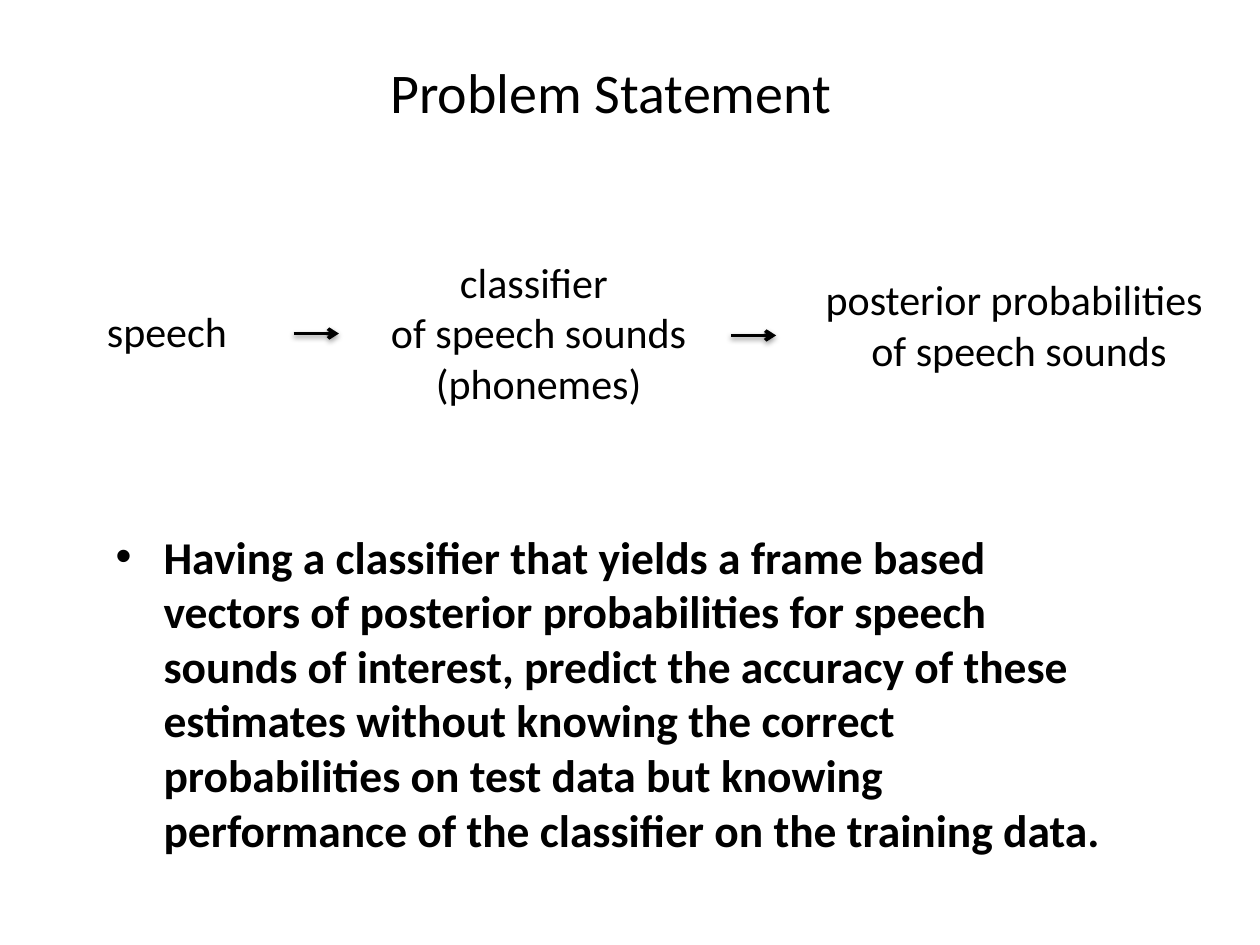
from dataclasses import dataclass

from lxml.etree import SubElement
from pptx import Presentation
from pptx.dml.color import RGBColor
from pptx.enum.shapes import MSO_CONNECTOR
from pptx.enum.text import MSO_ANCHOR, MSO_AUTO_SIZE, PP_ALIGN
from pptx.oxml.ns import qn
from pptx.util import Inches, Pt

WIDTH, HEIGHT = Inches(10), Inches(7.5)


@dataclass(frozen=True)
class Theme:
    font: str = "Calibri"
    ink: str = "000000"
    title: float = 32
    stage: float = 24
    body: float = 26
    line: float = 2


@dataclass(frozen=True)
class Box:
    """Left, top, width and height as shares of the slide."""
    x: float
    y: float
    w: float
    h: float

    def area(self) -> tuple:
        return (int(self.x * WIDTH), int(self.y * HEIGHT),
                int(self.w * WIDTH), int(self.h * HEIGHT))


@dataclass(frozen=True)
class Stage:
    box: Box
    lines: tuple
    align: PP_ALIGN = PP_ALIGN.CENTER


@dataclass(frozen=True)
class Arrow:
    x: float
    y: float
    length: float = 0.036


THEME = Theme()
TITLE = Box(0.035, 0.04, 0.9, 0.113)
BODY = Box(0.082, 0.553, 0.814, 0.372)
STAGES = (
    Stage(Box(0.075, 0.317, 0.116, 0.067), ("speech",), PP_ALIGN.LEFT),
    Stage(Box(0.299, 0.265, 0.257, 0.175),
          ("classifier ", "of speech sounds", "(phonemes)")),
    Stage(Box(0.643, 0.283, 0.324, 0.121),
          ("posterior probabilities", " of speech sounds")),
)
ARROWS = Arrow(0.233, 0.353), Arrow(0.58, 0.355)
GOAL = ("Having a classifier that yields a frame based vectors of posterior "
        "probabilities for speech sounds of interest, predict the accuracy of "
        "these estimates\u00a0without knowing the correct probabilities on test "
        "data but knowing performance of the classifier on the training data.")


def style(para, size: float, align: PP_ALIGN, bold: bool = False) -> None:
    para.alignment = align
    font = para.font
    font.name, font.size, font.bold = THEME.font, Pt(size), bold
    font.color.rgb = RGBColor.from_string(THEME.ink)


def add_title(slide, text: str) -> None:
    shape = slide.shapes.title
    shape.left, shape.top, shape.width, shape.height = TITLE.area()
    frame = shape.text_frame
    frame.text = text
    frame.vertical_anchor = MSO_ANCHOR.MIDDLE
    style(frame.paragraphs[0], THEME.title, PP_ALIGN.CENTER)


def add_body(slide, text: str) -> None:
    frame = slide.shapes.add_textbox(*BODY.area()).text_frame
    frame.word_wrap = True
    frame.text = text
    para = frame.paragraphs[0]
    style(para, THEME.body, PP_ALIGN.LEFT, bold=True)
    props = para._p.get_or_add_pPr()
    indent = Inches(0.38)
    props.set("marL", str(indent))
    props.set("indent", str(-indent))
    mark = props.makeelement(qn("a:buChar"), {"char": "•"})
    face = props.makeelement(qn("a:buFont"), {"typeface": "Arial"})
    props.find(qn("a:defRPr")).addprevious(face)
    face.addnext(mark)


def add_stage(slide, stage: Stage) -> None:
    frame = slide.shapes.add_textbox(*stage.box.area()).text_frame
    frame.word_wrap = False
    frame.auto_size = MSO_AUTO_SIZE.SHAPE_TO_FIT_TEXT
    frame.text = "\n".join(stage.lines)
    for para in frame.paragraphs:
        style(para, THEME.stage, stage.align)


def add_arrow(slide, arrow: Arrow) -> None:
    """Draw a level arrow with a soft shadow below it."""
    y = int(arrow.y * HEIGHT)
    link = slide.shapes.add_connector(
        MSO_CONNECTOR.STRAIGHT, int(arrow.x * WIDTH), y,
        int((arrow.x + arrow.length) * WIDTH), y)
    link.line.color.rgb = RGBColor.from_string(THEME.ink)
    link.line.width = Pt(THEME.line)
    SubElement(link.line._get_or_add_ln(), qn("a:tailEnd"), type="arrow")
    effects = SubElement(link._element.spPr, qn("a:effectLst"))
    shade = SubElement(effects, qn("a:outerShdw"), blurRad=str(Pt(3.1)),
                       dist=str(Pt(1.6)), dir="5400000", rotWithShape="0")
    tint = SubElement(shade, qn("a:srgbClr"), val=THEME.ink)
    SubElement(tint, qn("a:alpha"), val="38000")


def main() -> None:
    deck = Presentation()
    deck.slide_width, deck.slide_height = WIDTH, HEIGHT
    slide = deck.slides.add_slide(deck.slide_layouts[5])
    add_title(slide, "Problem Statement")
    add_body(slide, GOAL)
    for stage in STAGES:
        add_stage(slide, stage)
    for arrow in ARROWS:
        add_arrow(slide, arrow)
    deck.save("out.pptx")


if __name__ == "__main__":
    main()
